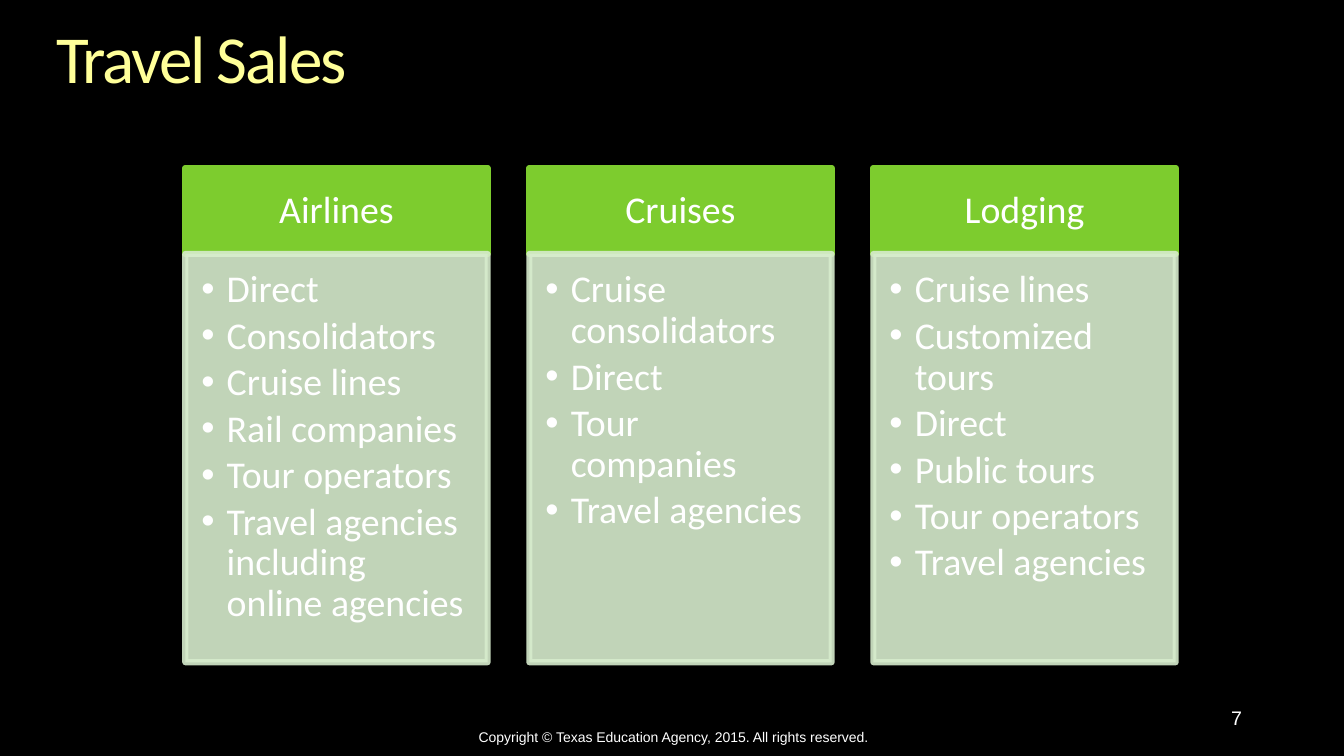
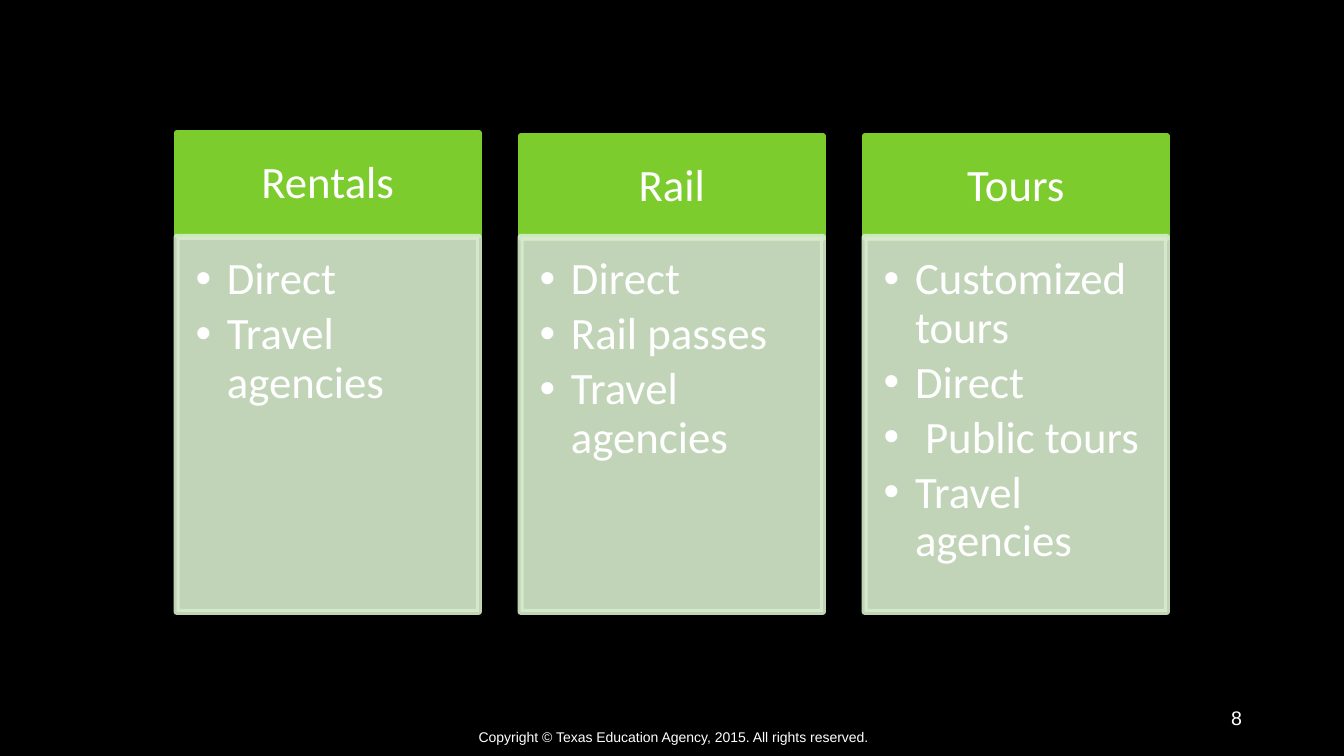
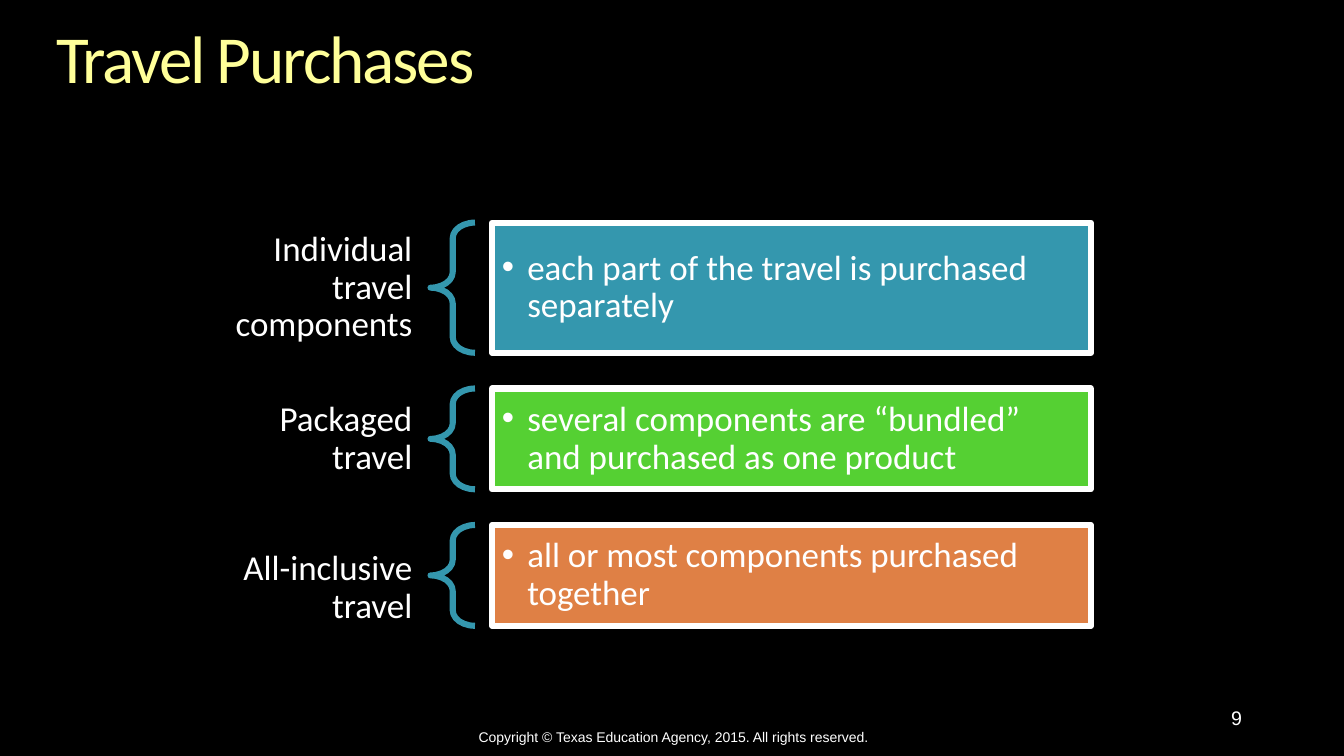
import dataclasses
import typing

import pptx
import pptx.dml.color
import pptx.enum.shapes
import pptx.enum.text
import pptx.oxml.ns
import pptx.util
from lxml import etree

Cm = pptx.util.Cm
Pt = pptx.util.Pt
Hue = pptx.dml.color.RGBColor
Kind = pptx.enum.shapes.MSO_SHAPE
Align = pptx.enum.text.PP_ALIGN
Anchor = pptx.enum.text.MSO_ANCHOR
qn = pptx.oxml.ns.qn


@dataclasses.dataclass(frozen=True)
class Theme:
    back: Hue = Hue(0, 0, 0)
    ink: Hue = Hue(255, 255, 255)
    title: Hue = Hue.from_string("FFFF99")
    head: Hue = Hue.from_string("7DCC2E")
    body: Hue = Hue.from_string("D7ECCD")
    teal: Hue = Hue.from_string("3497AE")
    green: Hue = Hue.from_string("55D033")
    rust: Hue = Hue.from_string("DF8045")
    face: str = "Calibri"
    plain: str = "Arial"
    title_size: int = 48
    row_size: int = 25
    foot_size: int = 10
    page_size: int = 14
    edge: float = 4.33


THEME = Theme()


class Box(typing.NamedTuple):
    left: float
    top: float
    width: float
    height: float

    def spans(self) -> list[pptx.util.Length]:
        return [Cm(side) for side in self]


class Inset(typing.NamedTuple):
    left: float = 0.25
    top: float = 0.13
    right: float = 0.25
    base: float = 0.13


@dataclasses.dataclass(frozen=True)
class Style:
    size: int
    face: str = THEME.face
    hue: Hue = THEME.ink
    align: Align = Align.LEFT
    anchor: Anchor = Anchor.TOP
    inset: Inset = Inset()
    pitch: float = 0.9
    hang: float = 0
    track: int = 0


@dataclasses.dataclass(frozen=True)
class Card:
    head: str
    items: list[str]
    lift: float = 0


@dataclasses.dataclass(frozen=True)
class Deck:
    left: float
    top: float
    split: float
    head_tall: float
    body_tall: float
    size: int
    hang: float
    cards: list[Card]
    width: float = 7.62
    step: float = 8.67


@dataclasses.dataclass(frozen=True)
class Row:
    label: str
    note: str
    fill: Hue
    tall: float = 2.54
    drop: float = 0


SALES = Deck(4.67, 4.24, 6.4, 2.16, 10.29, 27, 0.64, [
    Card("Airlines", ["Direct", "Consolidators", "Cruise lines", "Rail companies",
                      "Tour operators", "Travel agencies including online agencies"]),
    Card("Cruises", ["Cruise consolidators", "Direct", "Tour companies",
                     "Travel agencies"]),
    Card("Lodging", ["Cruise lines", "Customized tours", "Direct", "Public tours",
                     "Tour operators", "Travel agencies"]),
])

MORE = Deck(4.45, 3.43, 5.97, 2.57, 9.45, 32, 0.79, [
    Card("Rentals", ["Direct", "Travel agencies"], lift=0.08),
    Card("Rail", ["Direct", "Rail passes", "Travel agencies"]),
    Card("Tours", ["Customized tours", "Direct", " Public tours", "Travel agencies"]),
])

ROWS = [
    Row("Individual travel components",
        "each part of the travel is purchased separately", THEME.teal, tall=3.28),
    Row("Packaged travel",
        "several components are “bundled” and purchased as one product", THEME.green),
    Row("All-inclusive travel",
        "all or most components purchased together", THEME.rust, drop=0.33),
]


def write(shape, lines: list[str], style: Style) -> None:
    frame = shape.text_frame
    frame.text = "\n".join(lines)
    frame.word_wrap = True
    frame.vertical_anchor = style.anchor
    inset = style.inset
    frame.margin_left, frame.margin_right = Cm(inset.left), Cm(inset.right)
    frame.margin_top, frame.margin_bottom = Cm(inset.top), Cm(inset.base)
    for para in frame.paragraphs:
        para.alignment = style.align
        para.line_spacing = style.pitch
        if style.hang:
            props = para._p.get_or_add_pPr()
            props.set("marL", str(Cm(style.hang)))
            props.set("indent", str(-Cm(style.hang)))
            etree.SubElement(props, qn("a:buFont")).set("typeface", THEME.plain)
            etree.SubElement(props, qn("a:buChar")).set("char", "•")
            para.space_after = Pt(round(style.size * 0.15, 1))
        for run in para.runs:
            run.font.name = style.face
            run.font.size = Pt(style.size)
            run.font.color.rgb = style.hue
            if style.track:
                run._r.get_or_add_rPr().set("spc", str(style.track))


def add_text(slide, box: Box, text: str, style: Style) -> None:
    write(slide.shapes.add_textbox(*box.spans()), [text], style)


def add_form(slide, kind: Kind, box: Box, line: Hue, fill: Hue | None = None):
    shape = slide.shapes.add_shape(kind, *box.spans())
    shape.shadow.inherit = False
    if fill is None:
        shape.fill.background()
    else:
        shape.fill.solid()
        shape.fill.fore_color.rgb = fill
    shape.line.color.rgb = line
    shape.line.width = Pt(THEME.edge)
    return shape


def fade(shape, share: int) -> None:
    for tint in shape.element.iter(qn("a:srgbClr")):
        etree.SubElement(tint, qn("a:alpha")).set("val", str(share * 1000))


def add_deck(slide, deck: Deck) -> None:
    size = deck.size
    side, low = size * 0.02, size * 0.011
    near, base = size * 0.015, size * 0.0225
    head = Style(size, align=Align.CENTER, anchor=Anchor.MIDDLE,
                 inset=Inset(side, low, side, low))
    body = Style(size, inset=Inset(near, near, side, base), hang=deck.hang)
    for place, card in enumerate(deck.cards):
        left = deck.left + place * deck.step
        top = Box(left, deck.top - card.lift, deck.width, deck.head_tall)
        write(add_form(slide, Kind.RECTANGLE, top, THEME.head, THEME.head),
              [card.head], head)
        rest = Box(left, deck.split, deck.width, deck.body_tall)
        panel = add_form(slide, Kind.RECTANGLE, rest, THEME.body, THEME.body)
        fade(panel, 90)
        write(panel, card.items, body)


def add_rows(slide, rows: list[Row]) -> None:
    label = Style(THEME.row_size, align=Align.RIGHT, anchor=Anchor.MIDDLE,
                  inset=Inset(0.48, 0.18, 0.48, 0.18))
    note = Style(THEME.row_size, anchor=Anchor.MIDDLE,
                 inset=Inset(0.25, 0.25, 0.25, 0.25), hang=0.64)
    top, gap = 5.61, 0.9
    for row in rows:
        add_text(slide, Box(5.31, top + row.drop, 5.56, row.tall), row.label, label)
        brace = add_form(slide, Kind.LEFT_BRACE, Box(10.85, top, 1.12, row.tall),
                         THEME.teal)
        brace.adjustments[0] = 0.35
        brace.adjustments[1] = 0.5
        panel = add_form(slide, Kind.RECTANGLE, Box(12.4, top, 15.09, row.tall),
                         THEME.ink, row.fill)
        write(panel, [row.note], note)
        top += row.tall + gap


def add_slide(show, page: int, title: str = ""):
    slide = show.slides.add_slide(show.slide_layouts[6])
    if title:
        add_text(slide, Box(1.42, 0.64, 31.04, 1.85), title,
                 Style(THEME.title_size, hue=THEME.title,
                       inset=Inset(0, 0, 0, 0), track=-150))
    add_text(slide, Box(10.62, 18.24, 12.7, 0.69),
             "Copyright © Texas Education Agency, 2015. All rights reserved.",
             Style(THEME.foot_size, THEME.plain, align=Align.CENTER, pitch=1.0))
    add_text(slide, Box(23.93, 17.65, 7.62, 1.02), str(page),
             Style(THEME.page_size, THEME.plain, align=Align.RIGHT, pitch=1.0))
    return slide


def main() -> None:
    show = pptx.Presentation()
    show.slide_width, show.slide_height = Cm(33.87), Cm(19.05)
    fill = show.slide_master.background.fill
    fill.solid()
    fill.fore_color.rgb = THEME.back
    add_deck(add_slide(show, 7, "Travel Sales"), SALES)
    add_deck(add_slide(show, 8), MORE)
    add_rows(add_slide(show, 9, "Travel Purchases"), ROWS)
    show.save("out.pptx")


if __name__ == "__main__":
    main()
